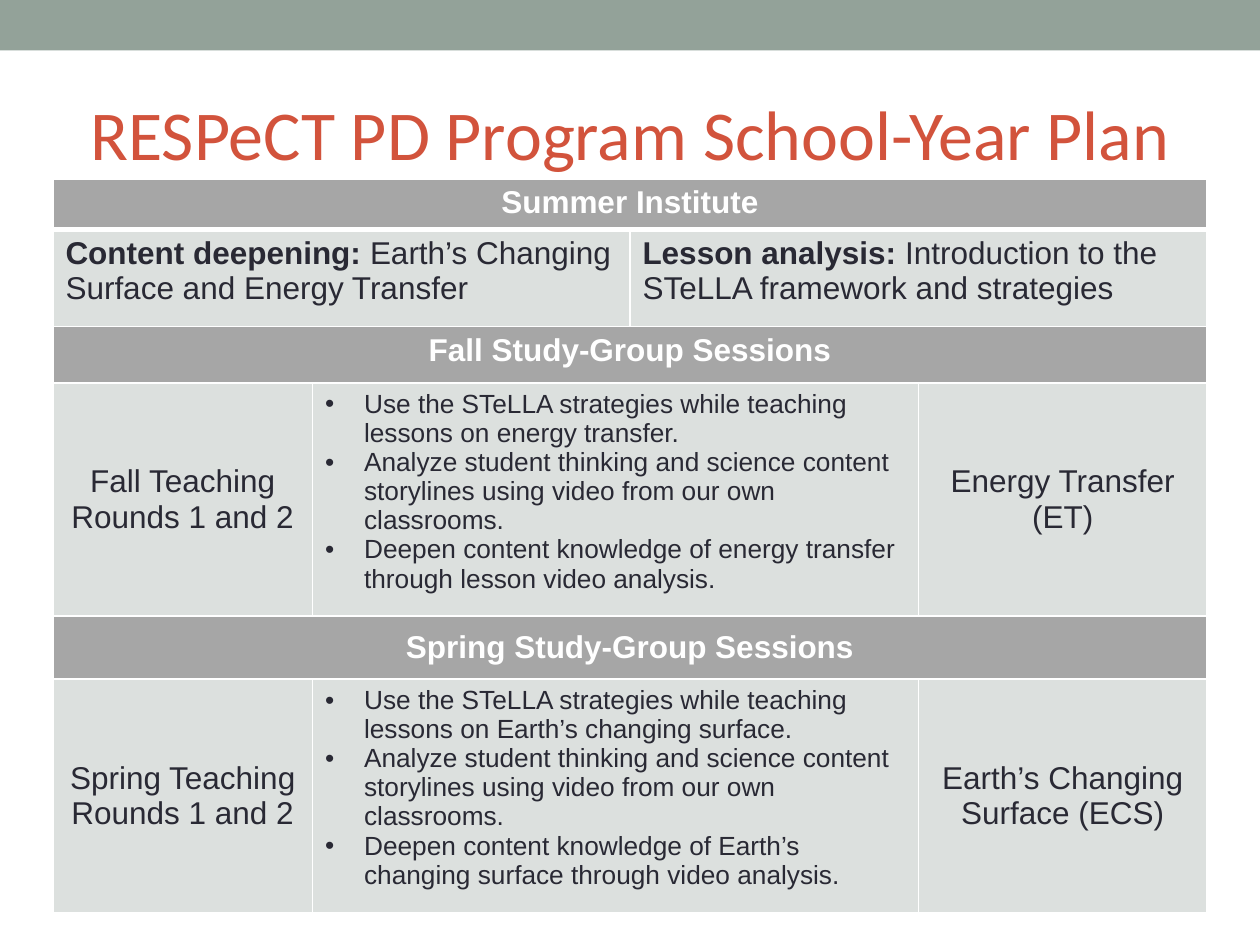
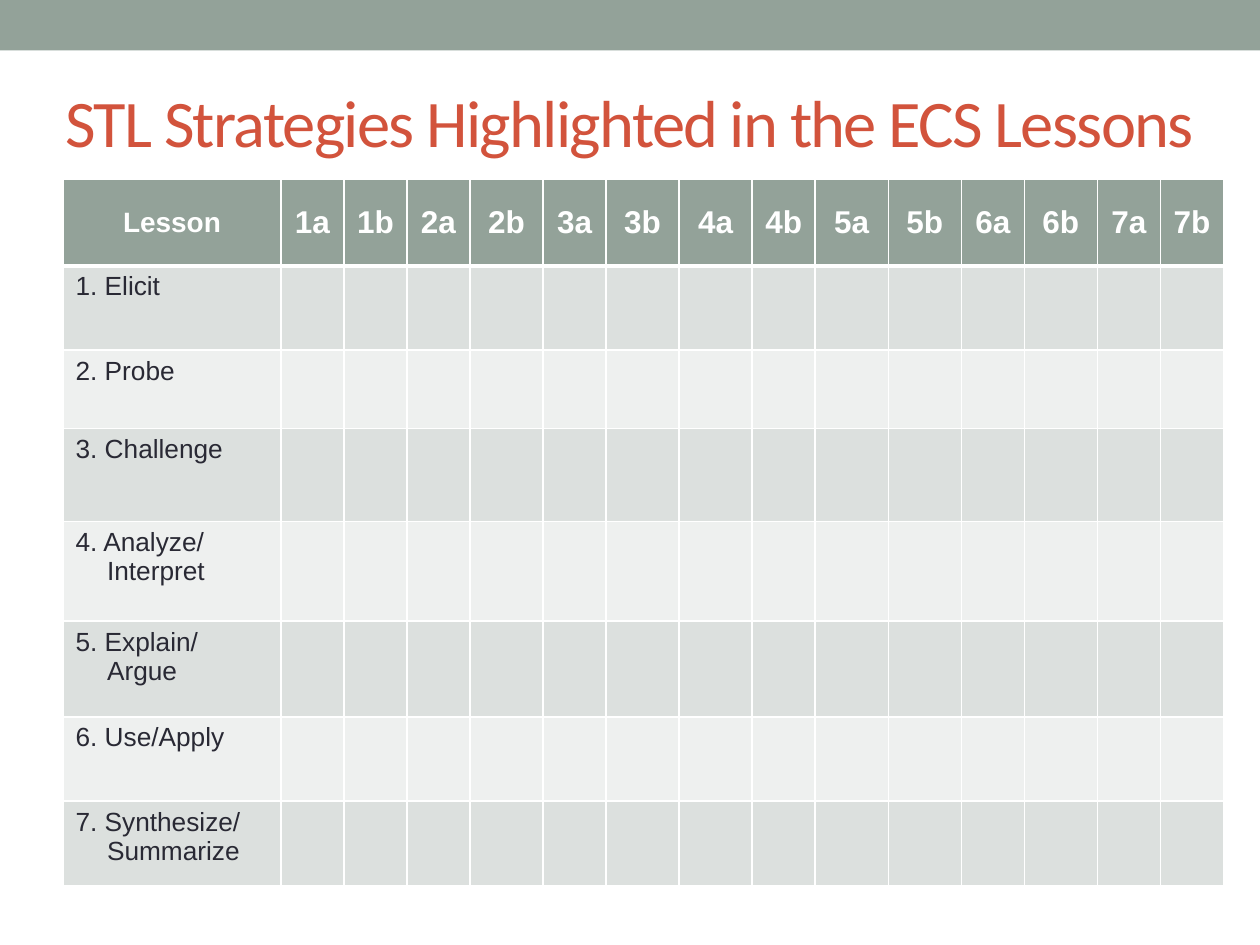
from dataclasses import dataclass

import pptx
import pptx.dml.color
import pptx.enum.shapes
import pptx.enum.text
import pptx.oxml.ns
import pptx.presentation
import pptx.slide
import pptx.table
import pptx.text.text
import pptx.util
from lxml import etree

Inches = pptx.util.Inches
RGBColor = pptx.dml.color.RGBColor
ALIGN = pptx.enum.text.PP_ALIGN
ANCHOR = pptx.enum.text.MSO_ANCHOR

SAGE = RGBColor(0x93, 0xA2, 0x99)
RUST = RGBColor(0xD2, 0x53, 0x3C)
INK = RGBColor(0x29, 0x29, 0x34)
WHITE = RGBColor(0xFF, 0xFF, 0xFF)
GRAY = RGBColor(0xA6, 0xA6, 0xA6)
MIST = RGBColor(0xDC, 0xE0, 0xDE)
PALE_MIST = RGBColor(0xEE, 0xF0, 0xEF)

SLIDE_WIDTH = Inches(10)
SLIDE_HEIGHT = Inches(7.5)
TABLE_TOP = Inches(1.42)


@dataclass(frozen=True)
class Title:
    text: str
    left: float
    top: float
    width: float
    height: float
    size: float
    align: ALIGN = ALIGN.LEFT
    anchor: ANCHOR = ANCHOR.TOP
    tracking: float = 0


@dataclass(frozen=True)
class Session:
    season: str
    topic: str
    focus: str
    content_goal: str
    header_anchor: ANCHOR


PLAN_TITLE = Title("RESPeCT PD Program School-Year Plan", 0.5, 0.67, 9, 6.83, 40, align=ALIGN.CENTER)
STRATEGY_TITLE = Title(
    "STL Strategies Highlighted in the ECS Lessons", 0.42, 0.42, 9.33, 1.08, 38,
    anchor=ANCHOR.MIDDLE, tracking=-1,
)

INSTITUTE = [
    ("Content deepening: ", "Earth’s Changing Surface and Energy Transfer"),
    ("Lesson analysis: ", "Introduction to the STeLLA framework and strategies"),
]
SESSIONS = [
    Session(
        "Fall", "Energy Transfer (ET)", "energy transfer",
        "energy transfer through lesson video analysis", ANCHOR.TOP,
    ),
    Session(
        "Spring", "Earth’s Changing Surface (ECS)", "Earth’s changing surface",
        "Earth’s changing surface through video analysis", ANCHOR.MIDDLE,
    ),
]
PLAN_COLUMNS = [2.06, 2.52, 2.29, 2.29]
PLAN_ROWS = [0.38, 0.77, 0.45, 1.79, 0.5, 1.79]

LESSONS = [f"{number}{part}" for number in range(1, 8) for part in "ab"]
WIDE_LESSONS = {"2b", "3b", "4a", "5a", "5b", "6b"}
STRATEGIES = [
    "Elicit", "Probe", "Challenge", "Analyze/ Interpret", "Explain/ Argue",
    "Use/Apply", "Synthesize/\vSummarize",
]
STRATEGY_ROWS = [0.69, 0.67, 0.62, 0.74, 0.79, 0.76, 0.67, 0.67]


def write_text(
    frame: pptx.text.text.TextFrame, text: str, *, lead: str = "", size: float = 18,
    color: RGBColor = INK, font: str = "Arial", bold: bool = False,
    align: ALIGN = ALIGN.LEFT, before: float = 0, after: float = 0,
    hanging: float = 0, bullet: str = "", tracking: float = 0,
) -> None:
    for index, line in enumerate(text.split("\n")):
        paragraph = frame.add_paragraph() if index else frame.paragraphs[0]
        paragraph.text = line
        paragraph.alignment = align
        paragraph.space_before = pptx.util.Pt(before)
        paragraph.space_after = pptx.util.Pt(after)
        if lead:
            paragraph.text = lead
            paragraph.add_run().text = line
        for position, run in enumerate(paragraph.runs):
            run.font.name = font
            run.font.size = pptx.util.Pt(size)
            run.font.color.rgb = color
            run.font.bold = bold or (bool(lead) and position == 0)
            if tracking:
                run.font._element.set("spc", str(round(tracking * 100)))
        properties = paragraph._p.get_or_add_pPr()
        if hanging:
            properties.set("marL", str(Inches(hanging)))
            properties.set("indent", str(-Inches(hanging)))
        if bullet:
            etree.SubElement(properties, pptx.oxml.ns.qn("a:buFont"), typeface="Arial")
            etree.SubElement(properties, pptx.oxml.ns.qn("a:buChar"), char=bullet)


def add_titled_slide(presentation: pptx.presentation.Presentation, title: Title) -> pptx.slide.Slide:
    slide = presentation.slides.add_slide(presentation.slide_layouts[6])
    band = slide.shapes.add_shape(
        pptx.enum.shapes.MSO_SHAPE.RECTANGLE, 0, 0, SLIDE_WIDTH, Inches(0.4)
    )
    band.shadow.inherit = False
    band.fill.solid()
    band.fill.fore_color.rgb = SAGE
    band.line.fill.background()
    box = slide.shapes.add_textbox(
        Inches(title.left), Inches(title.top), Inches(title.width), Inches(title.height)
    )
    box.text_frame.word_wrap = True
    box.text_frame.vertical_anchor = title.anchor
    write_text(
        box.text_frame, title.text, size=title.size, color=RUST, font="Calibri",
        align=title.align, tracking=title.tracking,
    )
    return slide


def draw_borders(cell: pptx.table._Cell, row_index: int) -> None:
    properties = cell._tc.get_or_add_tcPr()
    widths = {"L": 1, "R": 1, "T": 3 if row_index == 1 else 1, "B": 3 if row_index == 0 else 1}
    for side, width in widths.items():
        line = etree.SubElement(
            properties, pptx.oxml.ns.qn(f"a:ln{side}"), w=str(pptx.util.Pt(width))
        )
        fill = etree.SubElement(line, pptx.oxml.ns.qn("a:solidFill"))
        etree.SubElement(fill, pptx.oxml.ns.qn("a:srgbClr"), val=str(WHITE))


def add_grid(
    slide: pptx.slide.Slide, left: float, columns: list[float], rows: list[float],
    fills: list[RGBColor],
) -> pptx.table.Table:
    table = slide.shapes.add_table(
        len(rows), len(columns), Inches(left), TABLE_TOP, Inches(sum(columns)), Inches(sum(rows))
    ).table
    for column, width in zip(table.columns, columns):
        column.width = Inches(width)
    for row_index, (row, height, color) in enumerate(zip(table.rows, rows, fills)):
        row.height = Inches(height)
        for cell in row.cells:
            draw_borders(cell, row_index)
            cell.fill.solid()
            cell.fill.fore_color.rgb = color
    return table


def merge_cells(table: pptx.table.Table, row: int, first: int, last: int) -> pptx.table._Cell:
    table.cell(row, first).merge(table.cell(row, last))
    return table.cell(row, first)


def add_plan_header(table: pptx.table.Table, row: int, text: str, anchor: ANCHOR) -> None:
    header = merge_cells(table, row, 0, 3)
    header.vertical_anchor = anchor
    write_text(header.text_frame, text, color=WHITE, bold=True, align=ALIGN.CENTER)


def add_session(table: pptx.table.Table, row: int, session: Session) -> None:
    add_plan_header(table, row, f"{session.season} Study-Group Sessions", session.header_anchor)
    rounds = f"{session.season} Teaching\nRounds 1 and 2"
    for column, text in ((0, rounds), (3, session.topic)):
        cell = table.cell(row + 1, column)
        cell.vertical_anchor = ANCHOR.MIDDLE
        write_text(cell.text_frame, text, align=ALIGN.CENTER)
    goals = [
        f"Use the STeLLA strategies while teaching lessons on {session.focus}.",
        "Analyze student thinking and science content storylines using video from our own classrooms.",
        f"Deepen content knowledge of {session.content_goal}.",
    ]
    goal_cell = merge_cells(table, row + 1, 1, 2)
    write_text(goal_cell.text_frame, "\n".join(goals), size=15, hanging=0.31, bullet="•")


def build_plan_slide(presentation: pptx.presentation.Presentation) -> None:
    slide = add_titled_slide(presentation, PLAN_TITLE)
    table = add_grid(slide, 0.42, PLAN_COLUMNS, PLAN_ROWS, [GRAY, MIST] * 3)
    add_plan_header(table, 0, "Summer Institute", ANCHOR.TOP)
    for index, (lead, text) in enumerate(INSTITUTE):
        cell = merge_cells(table, 1, index * 2, index * 2 + 1)
        write_text(cell.text_frame, text, lead=lead)
    for index, session in enumerate(SESSIONS):
        add_session(table, 2 + index * 2, session)


def build_strategy_slide(presentation: pptx.presentation.Presentation) -> None:
    slide = add_titled_slide(presentation, STRATEGY_TITLE)
    columns = [1.73] + [0.58 if lesson in WIDE_LESSONS else 0.5 for lesson in LESSONS]
    fills = [SAGE] + [PALE_MIST if index % 2 else MIST for index in range(len(STRATEGIES))]
    table = add_grid(slide, 0.5, columns, STRATEGY_ROWS, fills)
    for index, heading in enumerate(["Lesson"] + LESSONS):
        cell = table.cell(0, index)
        cell.vertical_anchor = ANCHOR.MIDDLE
        write_text(
            cell.text_frame, heading, size=18 if index else 16, color=WHITE, bold=True,
            align=ALIGN.CENTER, before=12,
        )
    for number, strategy in enumerate(STRATEGIES, start=1):
        write_text(
            table.cell(number, 0).text_frame, f"{number}. {strategy}", size=15,
            after=12, hanging=0.25,
        )


def main() -> None:
    presentation = pptx.Presentation()
    presentation.slide_width = SLIDE_WIDTH
    presentation.slide_height = SLIDE_HEIGHT
    build_plan_slide(presentation)
    build_strategy_slide(presentation)
    presentation.save("out.pptx")


if __name__ == "__main__":
    main()
